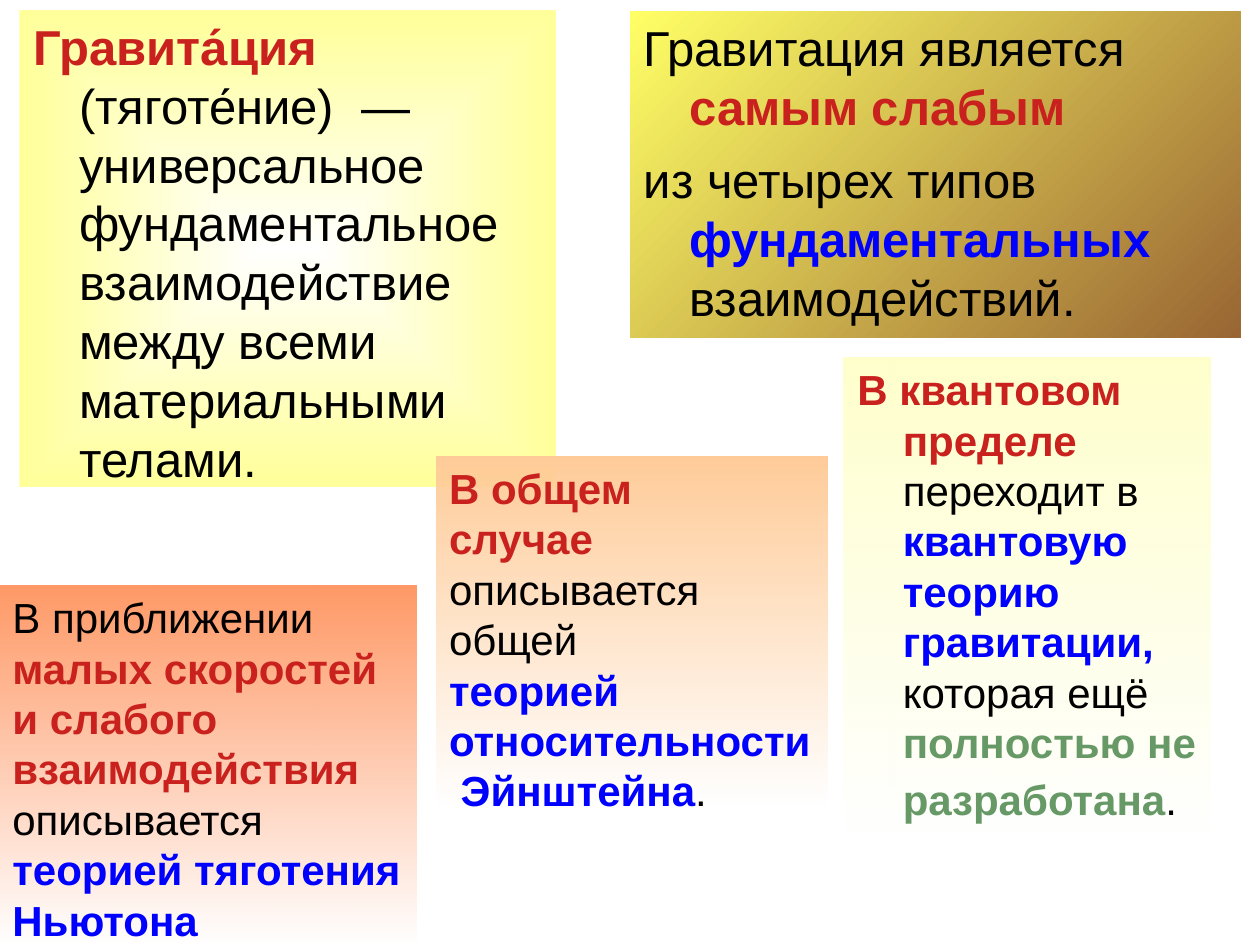
from dataclasses import dataclass

from pptx import Presentation
from pptx import util as u
from pptx.dml.color import RGBColor
from pptx.enum import shapes, text
from pptx.oxml import parse_xml
from pptx.oxml.ns import nsdecls, qn


@dataclass(frozen=True)
class Theme:
    font: str = "Arial"
    large: int = 28
    small: int = 24
    plain: str = "000000"
    red: str = "C9211E"
    blue: str = "0000FF"
    green: str = "669966"
    paragraph_gap: float = 8.2
    indent: float = 26.8
    hanging: float = -26


THEME = Theme()
BREAK = "\n"  # starts a new line inside a paragraph


def gradient(first, last, direction):
    """Two-stop gradient; each stop is (colour, opacity in percent)."""
    stops = "".join(
        f'<a:gs pos="{place}"><a:srgbClr val="{colour}">'
        f'<a:alpha val="{opacity * 1000}"/></a:srgbClr></a:gs>'
        for place, (colour, opacity) in ((0, first), (100000, last)))
    return parse_xml(f'<a:gradFill {nsdecls("a")} rotWithShape="1">'
                     f'<a:gsLst>{stops}</a:gsLst>{direction}</a:gradFill>')


def linear(degrees):
    return f'<a:lin ang="{degrees * 60000}" scaled="0"/>'


def fade_down(colour):
    return gradient((colour, 100), (colour, 0), linear(90))


def fade_to_centre(colour):
    centre = ('<a:path path="rect"><a:fillToRect l="50000" t="50000" '
              'r="50000" b="50000"/></a:path>')
    return gradient((colour, 0), (colour, 100), centre)


def add_words(para, words, colour, size):
    """Add one coloured stretch of text; every colour but plain is bold."""
    for number, line in enumerate(words.split(BREAK)):
        if number:
            para.add_line_break()
        if not line:
            continue
        span = para.add_run()
        span.text = line
        span.font.name = THEME.font
        span.font.size = u.Pt(size)
        span.font.bold = colour != THEME.plain
        span.font.color.rgb = RGBColor.from_string(colour)


def add_panel(page, box, fill, size, paragraphs, hanging=False):
    """Place a gradient panel with its paragraphs in box (points)."""
    panel = page.shapes.add_shape(shapes.MSO_SHAPE.RECTANGLE, *map(u.Pt, box))
    panel.shadow.inherit = False
    panel.line.fill.background()
    panel.fill.background()
    properties = panel._element.spPr
    properties.replace(properties.find(qn("a:noFill")), fill)

    frame = panel.text_frame
    frame.word_wrap = True
    frame.vertical_anchor = text.MSO_ANCHOR.TOP
    for number, spans in enumerate(paragraphs):
        para = frame.add_paragraph() if number else frame.paragraphs[0]
        para.alignment = text.PP_ALIGN.LEFT
        if number:
            para.space_before = u.Pt(THEME.paragraph_gap)
        if hanging:
            layout = para._p.get_or_add_pPr()
            layout.set("marL", str(u.Pt(THEME.indent)))
            layout.set("indent", str(u.Pt(THEME.hanging)))
        for words, colour, *own_size in spans:
            add_words(para, words, colour, own_size[0] if own_size else size)


def add_definition(page, box):
    add_panel(page, box, fade_to_centre("FFFF99"), THEME.large, [[
        ("Гравита́ция", THEME.red),
        (" (тяготе́ние)  — универсальное фундаментальное взаимодействие "
         "между всеми материальными телами.", THEME.plain),
    ]], hanging=True)


def add_general_case(page, box):
    add_panel(page, box, fade_down("FFCC99"), THEME.small, [[
        ("В общем\nслучае\n", THEME.red),
        ("описывается\nобщей\n", THEME.plain),
        ("теорией\nотносительности\n Эйнштейна", THEME.blue),
        (".", THEME.plain),
    ]])


def add_weakest_force(page, box):
    fill = gradient(("FFFF66", 100), ("996633", 100), linear(45))
    add_panel(page, box, fill, THEME.large, [
        [("Гравитация является ", THEME.plain),
         ("самым слабым", THEME.red)],
        [("из четырех типов ", THEME.plain),
         ("фундаментальных", THEME.blue),
         (" взаимодействий.", THEME.plain)],
    ], hanging=True)


def add_newton_case(page, box):
    add_panel(page, box, fade_down("FF9966"), THEME.small, [[
        ("В приближении ", THEME.plain),
        ("малых скоростей и слабого взаимодействия", THEME.red),
        (" описывается ", THEME.plain),
        ("теорией тяготения Ньютона", THEME.blue),
    ]])


def add_quantum_case(page, box):
    add_panel(page, box, fade_down("FFFFCC"), THEME.small, [[
        ("В квантовом пределе", THEME.red),
        (" переходит в ", THEME.plain),
        ("квантовую теорию гравитации,", THEME.blue),
        (" которая ещё ", THEME.plain),
        ("полностью не разработана", THEME.green),
        (".", THEME.plain),
        (" ", THEME.plain, THEME.large),  # gives the last line its height
    ]], hanging=True)


def main():
    deck = Presentation()
    deck.slide_width, deck.slide_height = u.Pt(720), u.Pt(540)
    page = deck.slides.add_slide(deck.slide_layouts[6])

    # Panels from back to front: left, top, width, height
    add_definition(page, (11.4, 5.8, 306, 272.2))
    add_general_case(page, (249.5, 260.8, 223.5, 198.7))
    add_weakest_force(page, (360, 6.5, 348.8, 186.2))
    add_newton_case(page, (0, 334.6, 238.2, 204.3))
    add_quantum_case(page, (482, 204.3, 209.8, 272))

    deck.save("out.pptx")


if __name__ == "__main__":
    main()
